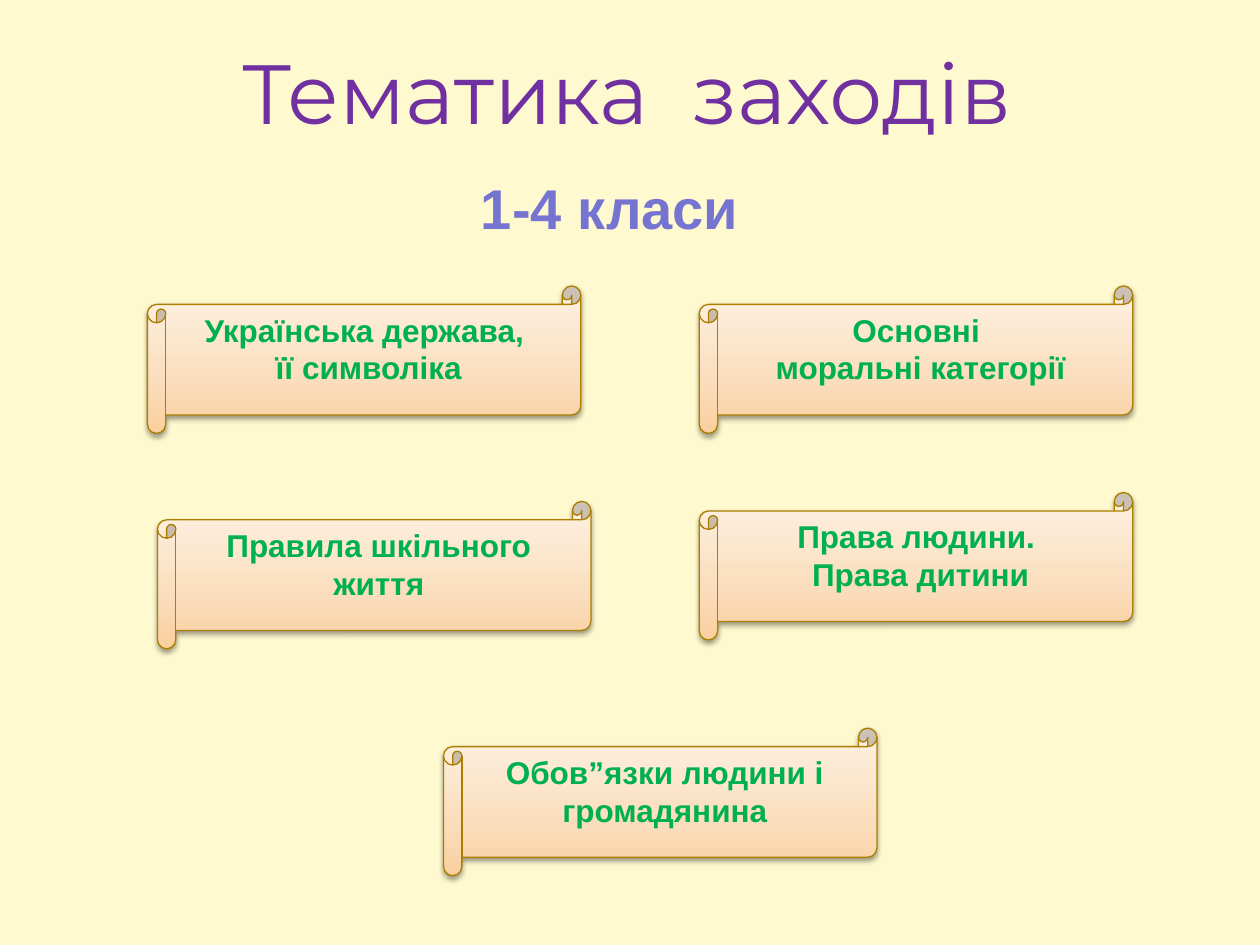
from dataclasses import dataclass

from lxml.etree import SubElement
from pptx import Presentation
from pptx.dml.color import RGBColor
from pptx.enum.shapes import MSO_SHAPE
from pptx.enum.text import MSO_ANCHOR, PP_ALIGN
from pptx.oxml import parse_xml
from pptx.oxml.ns import nsdecls, qn
from pptx.slide import Slide
from pptx.text.text import TextFrame
from pptx.util import Inches, Pt


@dataclass(frozen=True)
class TextStyle:
    font: str
    size: int
    color: str
    bold: bool = False
    line_spacing: float = 1.0


@dataclass(frozen=True)
class Theme:
    background: str = "FFF9CF"
    outline: str = "AA7F00"
    gradient: tuple = ((0, "FACF9E"), (35, "FADDBC"), (100, "FEF2E4"))
    title: TextStyle = TextStyle("Montserrat", 48, "7030A0", line_spacing=0.8)
    subtitle: TextStyle = TextStyle("Arial", 32, "7575D1", bold=True)
    topic: TextStyle = TextStyle("Arial", 18, "00B050", bold=True)


@dataclass(frozen=True)
class Topic:
    left: float
    top: float
    text: str


THEME = Theme()
SCROLL_WIDTH, SCROLL_HEIGHT = 3.44, 1.17
TOPICS = (
    Topic(1.17, 2.27, "Українська держава, \nїї символіка"),
    Topic(5.55, 2.27, "Основні \nморальні категорії"),
    Topic(1.25, 3.98, "Правила шкільного життя"),
    Topic(5.55, 3.91, "Права людини. \nПрава дитини"),
    Topic(3.52, 5.78, "Обов”язки людини і громадянина"),
)


def write_text(frame: TextFrame, text: str, style: TextStyle,
               anchor: MSO_ANCHOR = MSO_ANCHOR.TOP) -> None:
    frame.text = text
    frame.word_wrap = True
    frame.vertical_anchor = anchor
    for para in frame.paragraphs:
        para.alignment = PP_ALIGN.CENTER
        para.line_spacing = style.line_spacing
        for span in para.runs:
            span.font.name = style.font
            span.font.size = Pt(style.size)
            span.font.bold = style.bold
            span.font.color.rgb = RGBColor.from_string(style.color)


def add_heading(slide: Slide, left: float, top: float, width: float, height: float,
                text: str, style: TextStyle, anchor: MSO_ANCHOR) -> None:
    box = slide.shapes.add_textbox(Inches(left), Inches(top), Inches(width), Inches(height))
    write_text(box.text_frame, text, style, anchor)


def add_scroll(slide: Slide, topic: Topic) -> None:
    scroll = slide.shapes.add_shape(
        MSO_SHAPE.HORIZONTAL_SCROLL, Inches(topic.left), Inches(topic.top),
        Inches(SCROLL_WIDTH), Inches(SCROLL_HEIGHT))
    properties = scroll._element.spPr

    # Three-stop gradient, running from bottom to top
    stops = "".join(f'<a:gs pos="{position * 1000}"><a:srgbClr val="{color}"/></a:gs>'
                    for position, color in THEME.gradient)
    properties.append(parse_xml(
        f'<a:gradFill {nsdecls("a")} rotWithShape="1"><a:gsLst>{stops}</a:gsLst>'
        '<a:lin ang="16200000" scaled="0"/></a:gradFill>'))

    scroll.line.color.rgb = RGBColor.from_string(THEME.outline)
    scroll.line.width = Pt(0.75)

    # Soft shadow below the scroll
    scroll.shadow.inherit = False
    shadow = SubElement(properties.find(qn("a:effectLst")), qn("a:outerShdw"),
                        blurRad=str(Pt(3.1)), dist=str(Pt(1.6)), dir="5400000",
                        rotWithShape="0")
    shadow_color = SubElement(shadow, qn("a:srgbClr"), val="000000")
    SubElement(shadow_color, qn("a:alpha"), val="38000")

    write_text(scroll.text_frame, topic.text, THEME.topic)


def main() -> None:
    deck = Presentation()
    deck.slide_width, deck.slide_height = Inches(10), Inches(7.5)
    slide = deck.slides.add_slide(deck.slide_layouts[6])
    slide.background.fill.solid()
    slide.background.fill.fore_color.rgb = RGBColor.from_string(THEME.background)

    # Headings
    add_heading(slide, 0.5, 0.42, 8.95, 0.76, "Тематика  заходів",
                THEME.title, MSO_ANCHOR.MIDDLE)
    add_heading(slide, 1.48, 1.33, 6.72, 0.67, "1-4 класи",
                THEME.subtitle, MSO_ANCHOR.TOP)

    # Topic scrolls
    for topic in TOPICS:
        add_scroll(slide, topic)

    deck.save("out.pptx")


if __name__ == "__main__":
    main()
